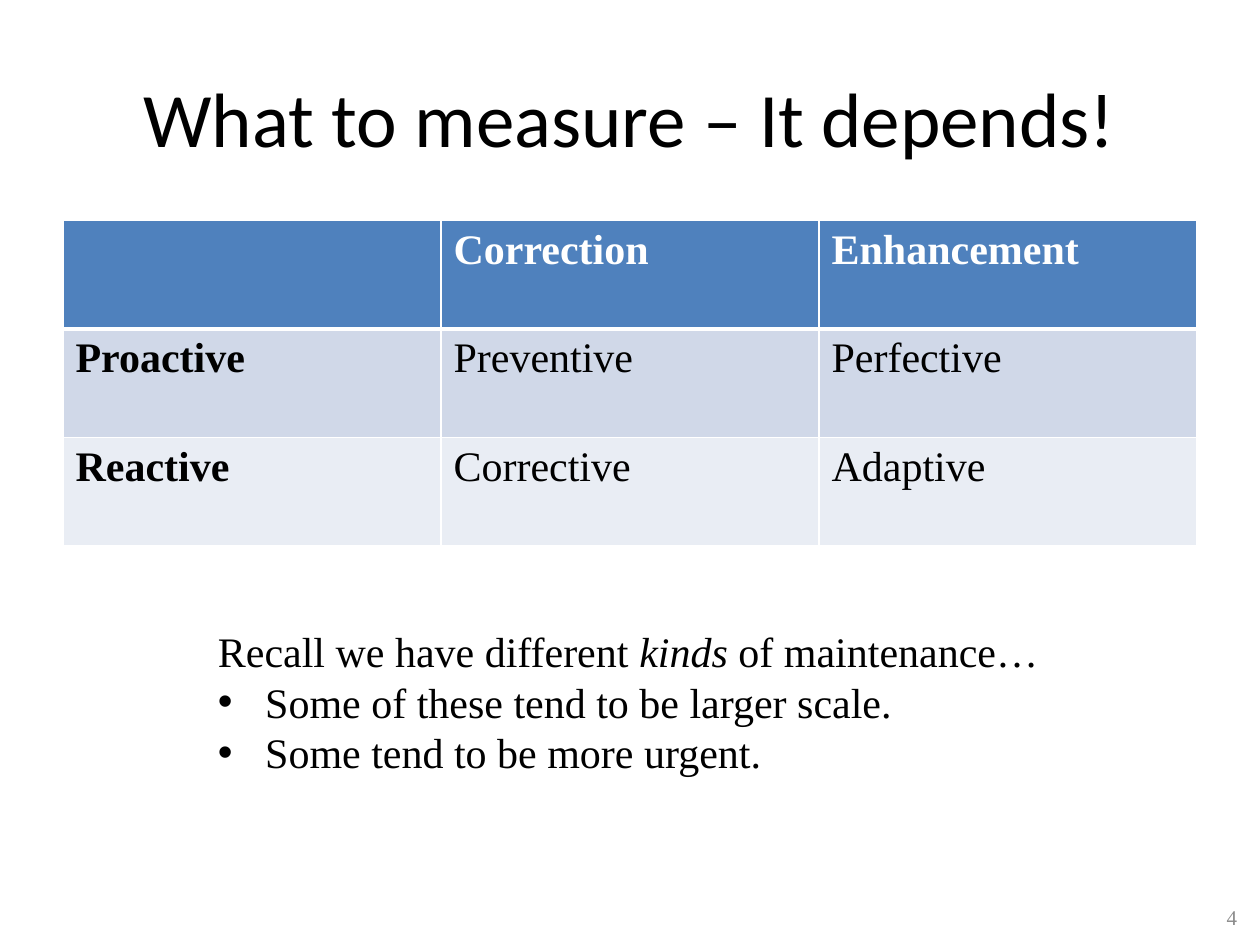
from lxml.etree import SubElement
from pptx import Presentation
from pptx.dml.color import RGBColor
from pptx.enum.text import MSO_ANCHOR, PP_ALIGN
from pptx.oxml.ns import qn
from pptx.util import Pt

COLORS = {
    "text": "000000",
    "white": "FFFFFF",
    "number": "8C8C8C",
    "header": "4F81BD",
    "band_dark": "D0D8E8",
    "band_light": "E9EDF4",
}
SERIF = "Times New Roman"
ROWS = [
    ("", "Correction", "Enhancement"),
    ("Proactive", "Preventive", "Perfective"),
    ("Reactive", "Corrective", "Adaptive"),
]
ROW_FILLS = ["header", "band_dark", "band_light"]
COLUMN_WIDTH, ROW_HEIGHT = 216, 62


def style_font(font, size, color="text", name=SERIF, bold=False):
    font.name = name
    font.size = Pt(size)
    font.bold = bold
    font.color.rgb = RGBColor.from_string(COLORS[color])


def add_text_box(slide, left, top, width, height, anchor, wrap=True):
    box = slide.shapes.add_textbox(Pt(left), Pt(top), Pt(width), Pt(height))
    box.text_frame.word_wrap = wrap
    box.text_frame.vertical_anchor = anchor
    return box.text_frame


def add_line(slide, bounds, text, alignment, **font_style):
    frame = add_text_box(slide, *bounds, MSO_ANCHOR.MIDDLE)
    paragraph = frame.paragraphs[0]
    paragraph.text = text
    paragraph.alignment = alignment
    style_font(paragraph.font, **font_style)


def set_borders(cell, widths):
    properties = cell._tc.get_or_add_tcPr()
    for side, width in widths.items():
        line = SubElement(properties, qn(f"a:ln{side}"), w=str(Pt(width)))
        fill = SubElement(line, qn("a:solidFill"))
        SubElement(fill, qn("a:srgbClr"), val=COLORS["white"])


def add_maintenance_table(slide):
    columns = len(ROWS[0])
    table = slide.shapes.add_table(
        len(ROWS), columns, Pt(36), Pt(126),
        Pt(COLUMN_WIDTH * columns), Pt(ROW_HEIGHT * len(ROWS))).table
    for row_index, (texts, fill) in enumerate(zip(ROWS, ROW_FILLS)):
        is_header = row_index == 0
        # A thick rule separates the header from the body
        widths = {"L": 1, "R": 1, "T": 3 if row_index == 1 else 1,
                  "B": 3 if is_header else 1}
        for column_index, text in enumerate(texts):
            cell = table.cell(row_index, column_index)
            set_borders(cell, widths)
            cell.fill.solid()
            cell.fill.fore_color.rgb = RGBColor.from_string(COLORS[fill])
            paragraph = cell.text_frame.paragraphs[0]
            paragraph.text = text
            style_font(paragraph.font, 24, "white" if is_header else "text",
                       bold=is_header or column_index == 0)


def add_bullet(frame, text):
    paragraph = frame.add_paragraph()
    paragraph.text = text
    properties = paragraph._p.get_or_add_pPr()
    properties.set("marL", str(Pt(27)))
    properties.set("indent", str(Pt(-27)))
    SubElement(properties, qn("a:buFont"), typeface="Arial")
    SubElement(properties, qn("a:buChar"), char="•")
    style_font(paragraph.font, 24)


def add_recall_note(slide):
    frame = add_text_box(slide, 117.5, 354, 487.5, 94.5, MSO_ANCHOR.TOP, wrap=False)
    paragraph = frame.paragraphs[0]
    for text, italic in [("Recall we have different ", False),
                         ("kinds ", True),
                         ("of maintenance…", False)]:
        run = paragraph.add_run()
        run.text = text
        run.font.italic = italic
    style_font(paragraph.font, 24)
    add_bullet(frame, "Some of these tend to be larger scale.")
    add_bullet(frame, "Some tend to be more urgent.")


def main():
    presentation = Presentation()
    presentation.slide_width = Pt(720)
    presentation.slide_height = Pt(540)
    slide = presentation.slides.add_slide(presentation.slide_layouts[6])

    # Slide number
    add_line(slide, (546, 510, 168, 28.5), "4", PP_ALIGN.RIGHT,
             size=12, color="number")
    # Title
    add_line(slide, (36, 21.6, 648, 90), "What to measure – It depends!",
             PP_ALIGN.CENTER, size=44, name="Calibri")
    # Kinds of maintenance
    add_maintenance_table(slide)
    add_recall_note(slide)

    presentation.save("out.pptx")


if __name__ == "__main__":
    main()
